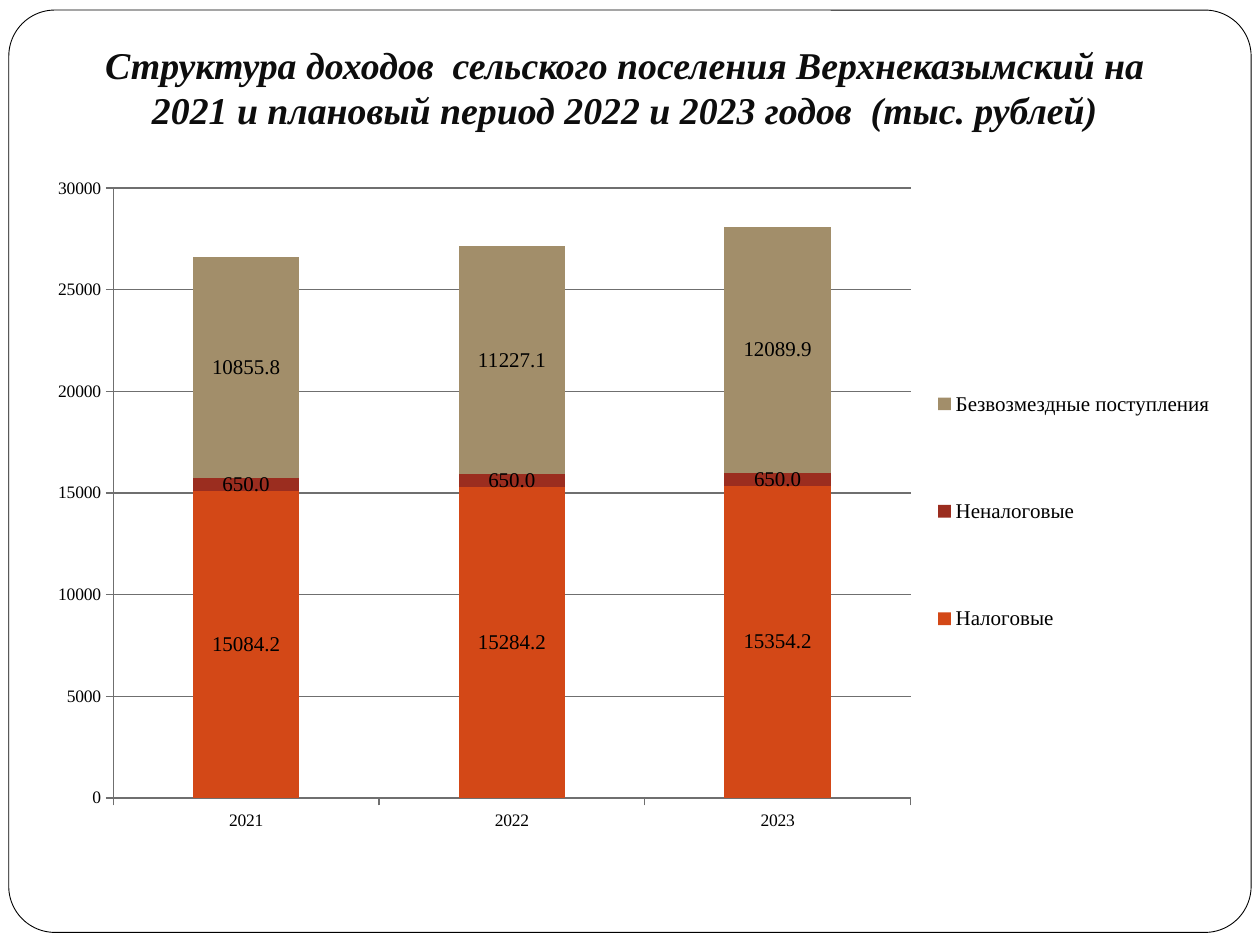
"""Build a slide with a stacked column chart of settlement income for 2021 to 2023."""
from lxml.etree import SubElement
from pptx import Presentation
from pptx.chart.data import CategoryChartData
from pptx.dml.color import RGBColor
from pptx.enum.chart import XL_CHART_TYPE, XL_LABEL_POSITION, XL_LEGEND_POSITION, XL_TICK_MARK
from pptx.enum.shapes import MSO_SHAPE
from pptx.enum.text import MSO_ANCHOR, PP_ALIGN
from pptx.oxml.ns import qn
from pptx.util import Inches, Pt


def paint(target, color):
    target.solid()
    target.fore_color.rgb = RGBColor.from_string(color)


def set_layout(parent, index, **values):
    layout = SubElement(parent, qn("c:layout"))
    parent.insert(index, layout)
    manual = SubElement(layout, qn("c:manualLayout"))
    for name, value in values.items():
        SubElement(manual, qn(f"c:{name}")).set("val", str(value))


FONT = "Times New Roman"
SERIES = [
    ("Налоговые", "D34817", (15084.2, 15284.2, 15354.2)),
    ("Неналоговые", "9B2D1F", (650, 650, 650)),
    ("Безвозмездные поступления", "A28E6A", (10855.8, 11227.1, 12089.9)),
]

deck = Presentation()
deck.slide_width, deck.slide_height = Inches(10), Inches(7.5)
page = deck.slides.add_slide(deck.slide_layouts[6])

frame = page.shapes.add_shape(
    MSO_SHAPE.ROUNDED_RECTANGLE, Inches(0.07), Inches(0.08), Inches(9.86), Inches(7.32))
frame.adjustments[0] = 0.05
frame.shadow.inherit = False
paint(frame.fill, "FFFFFF")
paint(frame.line.fill, "000000")
frame.line.width = Pt(0.5)

title = page.shapes.add_textbox(Inches(0.43), Inches(0.21), Inches(9.06), Inches(0.94))
box = title.text_frame
box.word_wrap = True
box.vertical_anchor = MSO_ANCHOR.BOTTOM
box.margin_bottom = Inches(0.1)
box.text = ("Структура доходов  сельского поселения Верхнеказымский на "
            "2021 и плановый период 2022 и 2023 годов  (тыс. рублей)")
para = box.paragraphs[0]
para.alignment = PP_ALIGN.CENTER
para.font.name, para.font.size = FONT, Pt(21.6)
para.font.bold = para.font.italic = True
paint(para.font.fill, "0D0D0D")

data = CategoryChartData(number_format="0.0")
data.categories = ["2021", "2022", "2023"]
for name, color, values in SERIES:
    data.add_series(name, values)
chart = page.shapes.add_chart(
    XL_CHART_TYPE.COLUMN_STACKED, Inches(0.28), Inches(1.31), Inches(9.53), Inches(5.39), data).chart
chart.has_title = False
chart.font.name, chart.font.size = FONT, Pt(10)
paint(chart.font.fill, "000000")

plot = chart.plots[0]
plot.gap_width, plot.overlap = 150, 100
plot.vary_by_categories = False
for series, (name, color, values) in zip(plot.series, SERIES):
    paint(series.format.fill, color)
    labels = series.data_labels
    labels.show_value = True
    labels.position = XL_LABEL_POSITION.CENTER
    labels.number_format, labels.number_format_is_linked = "0.0", False
    labels.font.name, labels.font.size = FONT, Pt(12)
    paint(labels.font.fill, "000000")

value_axis = chart.value_axis
value_axis.minimum_scale, value_axis.maximum_scale, value_axis.major_unit = 0, 30000, 5000
value_axis.tick_labels.number_format = "0"
value_axis.tick_labels.number_format_is_linked = False
value_axis.has_major_gridlines = True
for axis in (value_axis, chart.category_axis):
    axis.major_tick_mark = XL_TICK_MARK.OUTSIDE
    paint(axis.format.line.fill, "6F6F6F")
paint(value_axis.major_gridlines.format.line.fill, "6F6F6F")

chart.has_legend = True
legend = chart.legend
legend.position = XL_LEGEND_POSITION.RIGHT
legend.include_in_layout = False
legend.font.name, legend.font.size = FONT, Pt(12)
paint(legend.font.fill, "000000")
for old in legend._element.findall(qn("c:layout")):
    legend._element.remove(old)
set_layout(legend._element, 1, xMode="edge", yMode="edge", x=0.74, y=0.21, w=0.25, h=0.6)

plot_area = chart._chartSpace.chart.plotArea
for old in plot_area.findall(qn("c:layout")):
    plot_area.remove(old)
set_layout(plot_area, 0, layoutTarget="inner", xMode="edge", yMode="edge",
           x=0.065, y=0.034, w=0.664, h=0.898)

deck.save("out.pptx")
